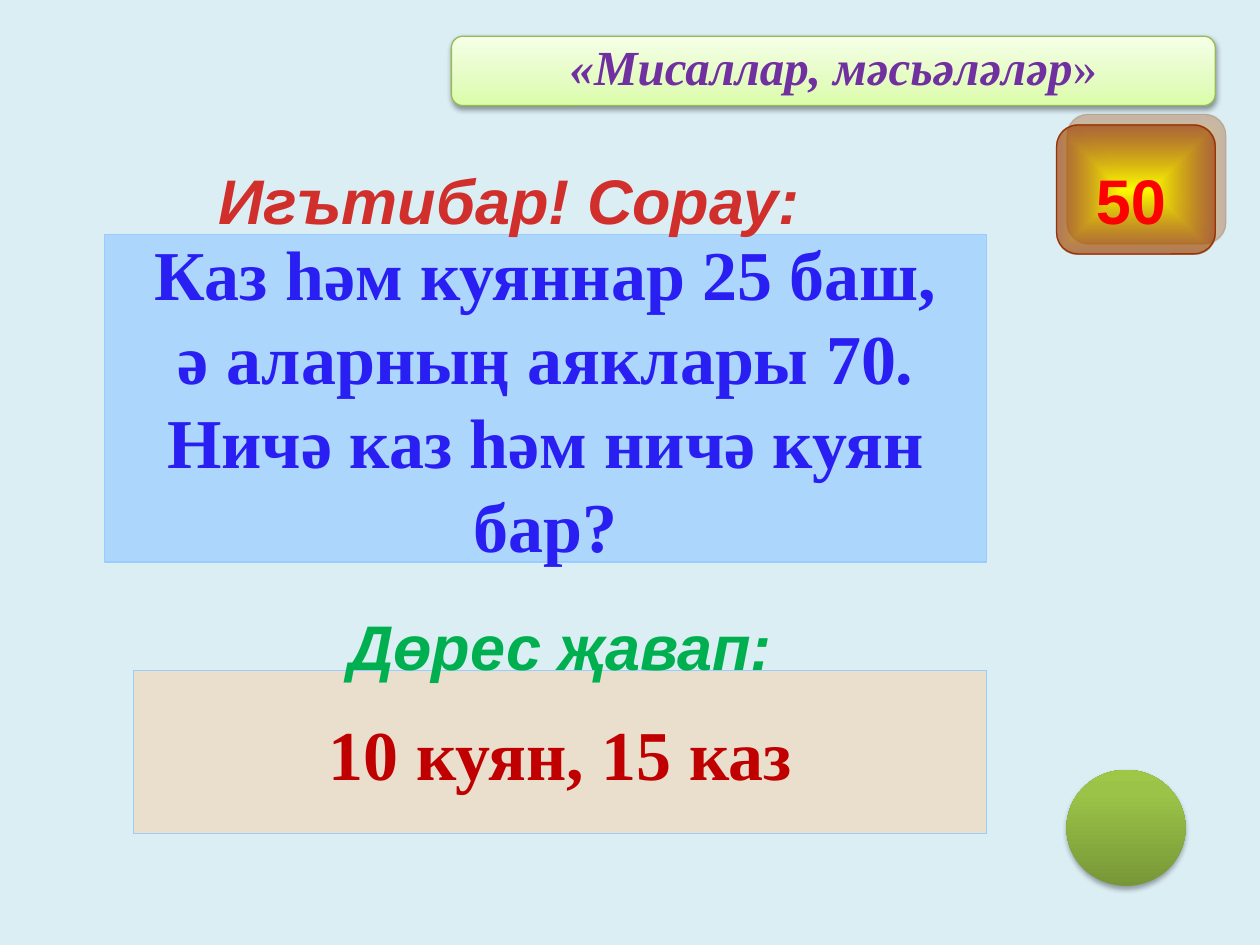
from dataclasses import dataclass

from lxml import etree
from pptx import Presentation
from pptx.dml.color import RGBColor
from pptx.enum.shapes import MSO_SHAPE
from pptx.enum.text import MSO_ANCHOR, PP_ALIGN
from pptx.oxml.ns import qn
from pptx.util import Cm, Pt

RECTANGLE = MSO_SHAPE.RECTANGLE
ROUNDED = MSO_SHAPE.ROUNDED_RECTANGLE
OVAL = MSO_SHAPE.OVAL
CENTER = PP_ALIGN.CENTER
TOP = MSO_ANCHOR.TOP
MIDDLE = MSO_ANCHOR.MIDDLE


@dataclass(frozen=True)
class Theme:
    background: str = "DBEEF4"
    panel_line: str = "99CCFF"
    question_fill: str = "99CCFF"
    answer_fill: str = "FFCC99"
    question_text: str = "291FF3"
    answer_text: str = "C00000"
    question_heading: str = "D02F2C"
    answer_heading: str = "00B050"
    badge_line: str = "993300"
    badge_text: str = "FF0000"
    title_line: str = "98B955"
    title_text: str = "7030A0"
    button_stops: tuple = ((0, "779737", 100), (80, "9BC348", 100), (100, "9DC746", 100))
    badge_stops: tuple = ((0, "FFFF00", 100), (100, "993300", 62))
    title_stops: tuple = ((0, "DAFDA7", 100), (35, "E4FCC2", 100), (100, "F5FFE7", 100))
    button_shadow: tuple = ("000000", 35, 3.1, 1.8, 90)
    badge_shadow: tuple = ("996633", 50, 0, 8.5, 315)
    title_shadow: tuple = ("000000", 38, 3.1, 1.6, 90)
    serif: str = "Times New Roman"
    sans: str = "Arial"
    body_size: int = 40
    heading_size: int = 36
    title_size: int = 28
    line_width: float = 0.75


def add_element(parent, tag, **attributes):
    values = {name: str(value) for name, value in attributes.items()}
    return etree.SubElement(parent, qn(tag), values)


def add_color(parent, color, opacity):
    element = add_element(parent, "a:srgbClr", val=color)
    if opacity < 100:
        add_element(element, "a:alpha", val=opacity * 1000)


def write_text(shape, text, font, size, color, bold=True, italic=False):
    paragraph = shape.text_frame.paragraphs[0]
    paragraph.alignment = CENTER
    run = paragraph.add_run()
    run.text = text
    run.font.name = font
    run.font.size = Pt(size)
    run.font.bold = bold
    run.font.italic = italic
    run.font.color.rgb = RGBColor.from_string(color)


class SlideBuilder:
    def __init__(self, slide, theme):
        self.slide = slide
        self.theme = theme
        fill = slide.background.fill
        fill.solid()
        fill.fore_color.rgb = RGBColor.from_string(theme.background)

    def shape(self, kind, box, line=None):
        shape = self.slide.shapes.add_shape(kind, *map(Cm, box))
        shape.shadow.inherit = False
        shape.text_frame.vertical_anchor = MIDDLE
        if line:
            shape.line.color.rgb = RGBColor.from_string(line)
            shape.line.width = Pt(self.theme.line_width)
        else:
            shape.line.fill.background()
        return shape

    def panel(self, box, color, opacity, side_margin=0.25):
        shape = self.shape(RECTANGLE, box, self.theme.panel_line)
        shape.fill.solid()
        shape.fill.fore_color.rgb = RGBColor.from_string(color)
        color_element = shape._element.spPr.find(qn("a:solidFill"))[0]
        add_element(color_element, "a:alpha", val=opacity * 1000)
        frame = shape.text_frame
        frame.word_wrap = True
        frame.margin_left = frame.margin_right = Cm(side_margin)
        return shape

    def glossy(self, kind, box, stops, shadow, line=None, angle=None):
        shape = self.shape(kind, box, line)
        shape.text_frame.word_wrap = False
        shape.fill.background()
        properties = shape._element.spPr
        gradient = etree.Element(qn("a:gradFill"), rotWithShape="1")
        stop_list = add_element(gradient, "a:gsLst")
        for position, color, opacity in stops:
            add_color(add_element(stop_list, "a:gs", pos=position * 1000), color, opacity)
        if angle is None:
            route = add_element(gradient, "a:path", path="shape")
            add_element(route, "a:fillToRect", l=50000, t=50000, r=50000, b=50000)
        else:
            add_element(gradient, "a:lin", ang=angle * 60000, scaled=0)
        properties.replace(properties.find(qn("a:noFill")), gradient)
        color, opacity, blur, distance, direction = shadow
        outer = add_element(properties.find(qn("a:effectLst")), "a:outerShdw",
                            blurRad=int(Pt(blur)), dist=int(Pt(distance)),
                            dir=direction * 60000, algn="ctr", rotWithShape=0)
        add_color(outer, color, opacity)
        return shape

    def heading(self, text, box, color, italic=True):
        text_box = self.slide.shapes.add_textbox(*map(Cm, box))
        frame = text_box.text_frame
        frame.word_wrap = False
        frame.vertical_anchor = TOP
        frame.margin_left = frame.margin_right = 0
        write_text(text_box, text, font=self.theme.sans, size=self.theme.heading_size,
                   color=color, italic=italic)


def main():
    presentation = Presentation()
    presentation.slide_width = Cm(25.4)
    presentation.slide_height = Cm(19.05)
    theme = Theme()
    builder = SlideBuilder(presentation.slides.add_slide(presentation.slide_layouts[6]), theme)

    builder.glossy(OVAL, (21.5, 15.52, 2.4, 2.34), theme.button_stops,
                   theme.button_shadow, angle=270)

    body = {"font": theme.serif, "size": theme.body_size}
    question = builder.panel((2.11, 4.73, 17.78, 6.6), theme.question_fill, 70, side_margin=0.75)
    write_text(question,
               "Каз һәм куяннар 25 баш, ә аларның аяклары 70. Ничә каз һәм ничә куян бар?",
               color=theme.question_text, **body)
    answer = builder.panel((2.69, 13.52, 17.2, 3.28), theme.answer_fill, 42)
    write_text(answer, "10 куян, 15 каз", color=theme.answer_text, **body)

    builder.heading("Дөрес җавап:", (4.29, 12.12, 14, 1.02), theme.answer_heading)
    builder.heading("Игътибар! Сорау:", (2.67, 3.13, 15.19, 1.42), theme.question_heading)

    builder.glossy(ROUNDED, (21.3, 2.52, 3.2, 2.6), theme.badge_stops,
                   theme.badge_shadow, theme.badge_line)
    builder.heading("50", (21.8, 3.13, 2, 1.4), theme.badge_text, italic=False)

    title = builder.glossy(ROUNDED, (9.1, 0.73, 15.4, 1.4), theme.title_stops,
                           theme.title_shadow, theme.title_line, angle=270)
    title.text_frame.margin_top = 0
    title.text_frame.margin_bottom = Cm(0.22)
    title_format = {"font": theme.serif, "size": theme.title_size, "color": theme.title_text}
    write_text(title, "«Мисаллар, мәсьәләләр", italic=True, **title_format)
    write_text(title, "»", bold=False, **title_format)

    presentation.save("out.pptx")


if __name__ == "__main__":
    main()
